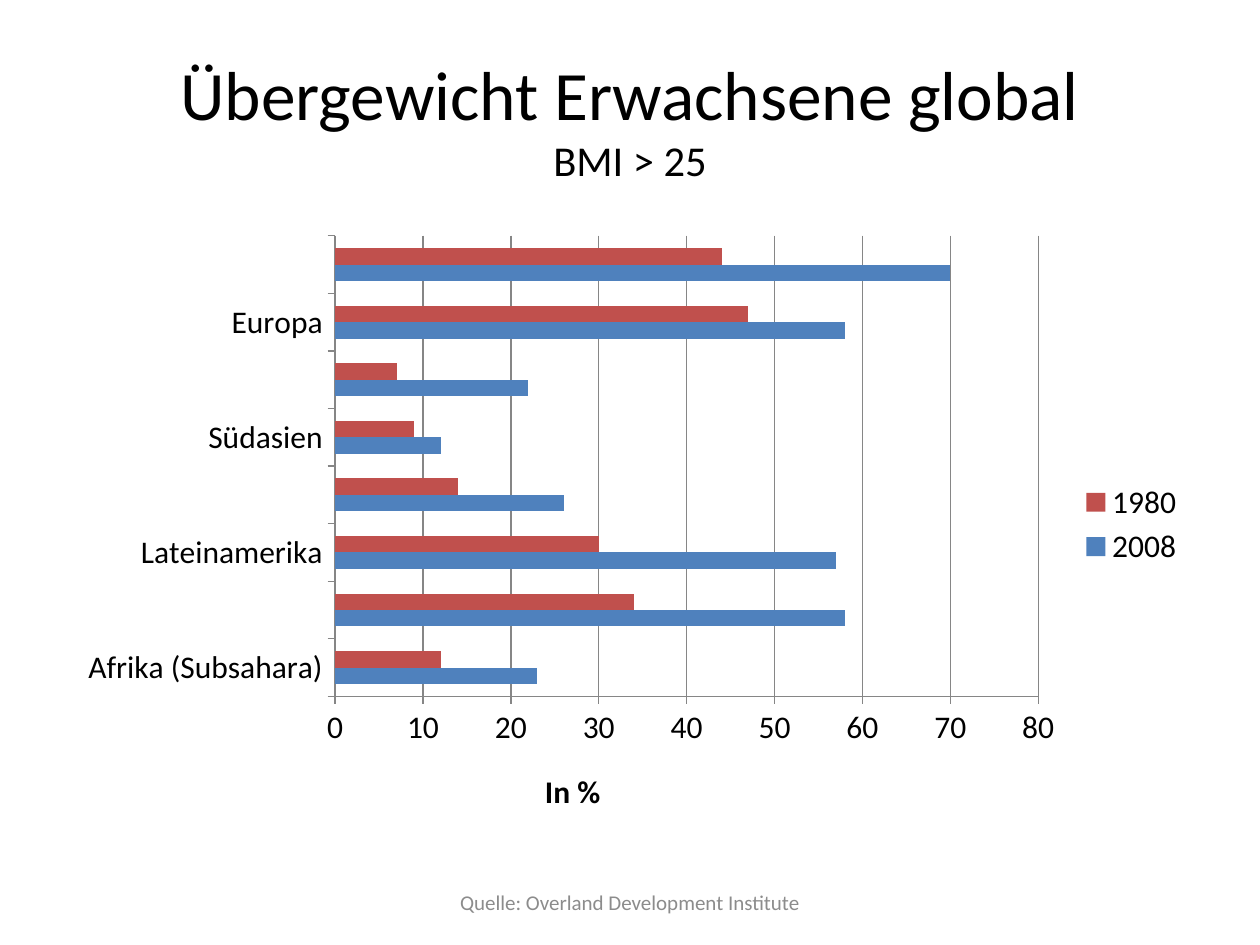
import pptx
import pptx.chart.data
import pptx.dml.color
import pptx.enum.chart
import pptx.enum.text
import pptx.oxml
import pptx.oxml.ns
import pptx.util

WIDE, HIGH = 10, 7.5
FONT = "Calibri"
DATA = [
    ("Afrika (Subsahara)", 23, 12),
    ("", 58, 34),
    ("Lateinamerika", 57, 30),
    ("", 26, 14),
    ("Südasien", 12, 9),
    ("", 22, 7),
    ("Europa", 58, 47),
    ("", 70, 44),
]
SERIES = [("2008", "4F81BD"), ("1980", "C0504D")]


def paint(hue):
    """Turn a hex string into a colour."""
    return pptx.dml.color.RGBColor.from_string(hue)


def style(font, size, hue="000000", bold=False):
    """Set face, size, colour and weight of a font."""
    font.name, font.size, font.bold = FONT, pptx.util.Pt(size), bold
    font.color.rgb = paint(hue)


def scale(box):
    """Turn shares of the slide into lengths."""
    return [pptx.util.Inches(part * side) for part, side in zip(box, (WIDE, HIGH) * 2)]


def write(slide, box, text, sizes, hue="000000"):
    """Place centred text with one size for each line."""
    frame = slide.shapes.add_textbox(*scale(box)).text_frame
    frame.word_wrap = True
    frame.vertical_anchor = pptx.enum.text.MSO_ANCHOR.MIDDLE
    para = frame.paragraphs[0]
    para.text = text
    para.alignment = pptx.enum.text.PP_ALIGN.CENTER
    for run, size in zip(para.runs, sizes):
        style(run.font, size, hue)


def layout(left, top, width=None, height=None):
    """Make a manual chart layout from shares of the chart."""
    tags = [("xMode", "edge"), ("yMode", "edge"), ("x", left), ("y", top)]
    if width:
        tags = [("layoutTarget", "inner")] + tags + [("w", width), ("h", height)]
    body = "".join(f'<c:{tag} val="{val}"/>' for tag, val in tags)
    space = pptx.oxml.ns.nsdecls("c")
    return pptx.oxml.parse_xml(
        f"<c:layout {space}><c:manualLayout>{body}</c:manualLayout></c:layout>")


def swap(node, item):
    """Replace the layout of a chart part, keeping the schema order."""
    for old in node.findall(pptx.oxml.ns.qn("c:layout")):
        node.remove(old)
    text = node.find(pptx.oxml.ns.qn("c:tx"))
    if text is None:
        node.insert(0, item)
    else:
        text.addnext(item)


def draw(slide, box):
    """Place the bar chart of both years."""
    kinds = pptx.enum.chart
    data = pptx.chart.data.CategoryChartData()
    data.categories = [row[0] for row in DATA]
    for col, (name, hue) in enumerate(SERIES, 1):
        data.add_series(name, [row[col] for row in DATA])
    chart = slide.shapes.add_chart(
        kinds.XL_CHART_TYPE.BAR_CLUSTERED, *scale(box), data).chart
    style(chart.font, 18)
    chart.has_title = False
    chart.has_legend = True
    chart.legend.position = kinds.XL_LEGEND_POSITION.RIGHT
    chart.legend.include_in_layout = False
    plot = chart.plots[0]
    plot.gap_width, plot.overlap, plot.vary_by_categories = 150, 0, False
    for bar, (name, hue) in zip(plot.series, SERIES):
        bar.format.fill.solid()
        bar.format.fill.fore_color.rgb = paint(hue)
    cat, val = chart.category_axis, chart.value_axis
    val.minimum_scale, val.maximum_scale, val.major_unit = 0, 80, 10
    val.has_major_gridlines = True
    for part in (cat, val, val.major_gridlines):
        part.format.line.color.rgb = paint("868686")
        part.format.line.width = pptx.util.Pt(0.75)
    for axis in (cat, val):
        axis.major_tick_mark = kinds.XL_TICK_MARK.OUTSIDE
    title = val.axis_title
    title.text_frame.text = "In %"
    style(title.text_frame.paragraphs[0].runs[0].font, 18, bold=True)
    swap(title._element, layout(0.42, 0.89))
    swap(chart._chartSpace.chart.plotArea, layout(0.24, 0.03, 0.62, 0.75))


def main():
    """Build and save the slide."""
    deck = pptx.Presentation()
    deck.slide_width = pptx.util.Inches(WIDE)
    deck.slide_height = pptx.util.Inches(HIGH)
    slide = deck.slides.add_slide(deck.slide_layouts[6])
    write(slide, (0.05, 0.04, 0.9, 0.17),
          "Übergewicht Erwachsene global\vBMI > 25", (39.6, 24.3))
    draw(slide, (0.05, 0.23, 0.9, 0.65))
    write(slide, (0.34, 0.93, 0.32, 0.05),
          "Quelle: Overland Development Institute", (12,), "8C8C8C")
    deck.save("out.pptx")


if __name__ == "__main__":
    main()
